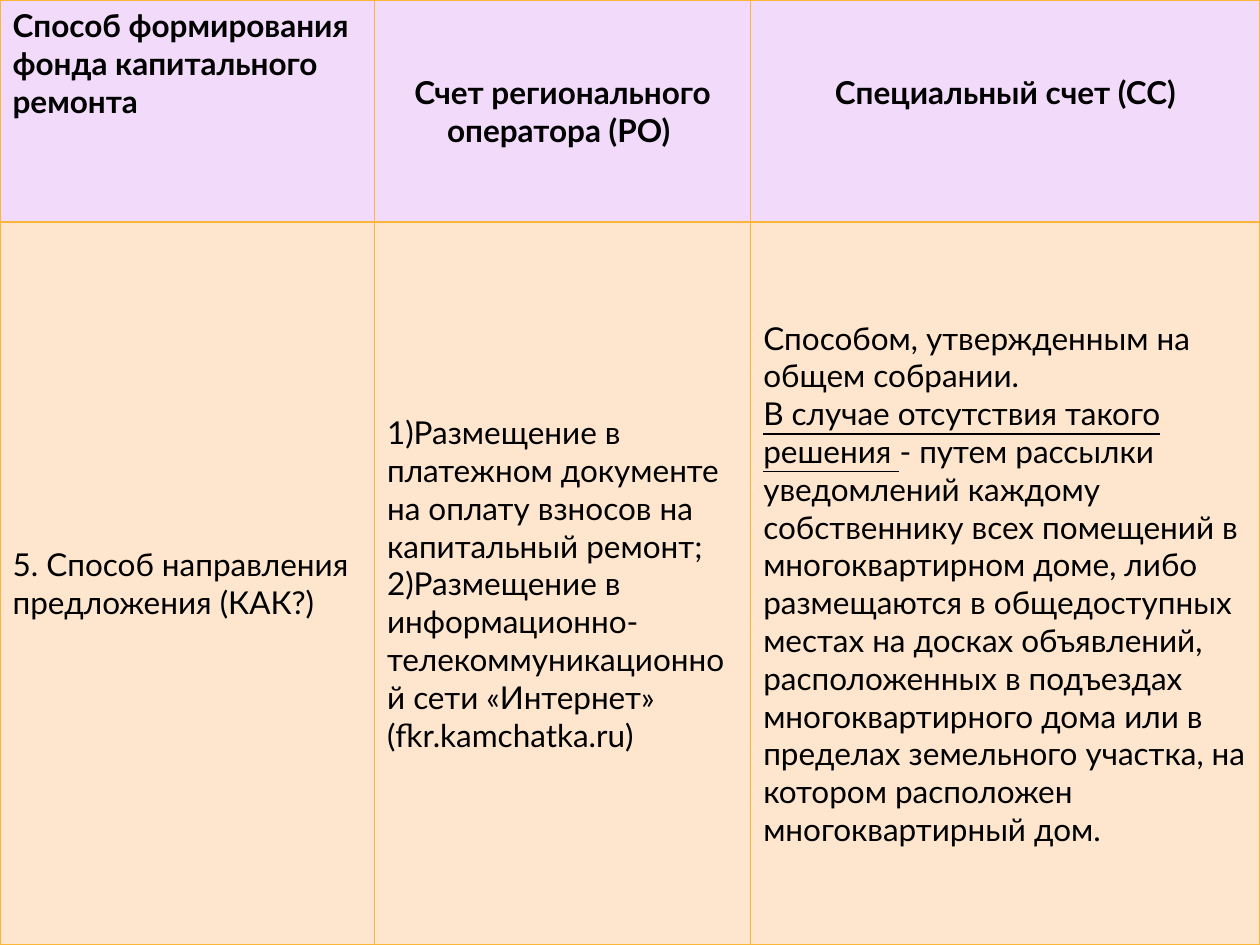
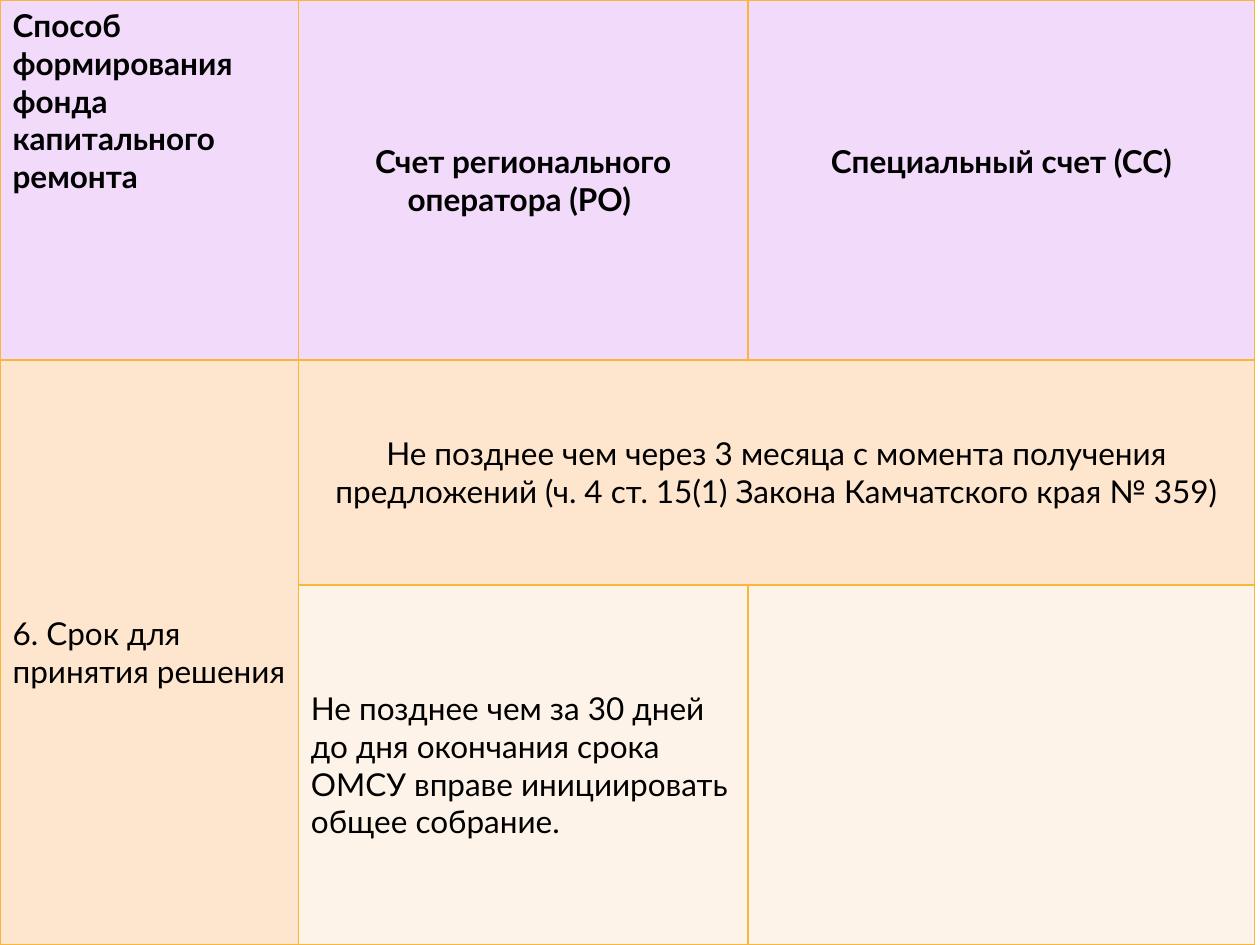
from lxml import etree
from pptx import Presentation
from pptx import util as u
from pptx.dml.color import RGBColor
from pptx.enum import text
from pptx.oxml import ns

Pt = u.Pt
HEADER, ROW, ROW_LIGHT = "F1DAFA", "FDE5CE", "FEF3E8"
LEFT, CENTER = text.PP_ALIGN.LEFT, text.PP_ALIGN.CENTER
TOP, MIDDLE = text.MSO_ANCHOR.TOP, text.MSO_ANCHOR.MIDDLE


def color(hex_string):
    return RGBColor.from_string(hex_string)


class Deck:
    font, size, ink, border = "Lato", 18, "000000", "F9B639"
    line_height = 21.6

    def __init__(self):
        self.prs = Presentation()
        self.prs.slide_width, self.prs.slide_height = Pt(720), Pt(540)

    def new_slide(self):
        self.slide = self.prs.slides.add_slide(self.prs.slide_layouts[6])

    def table(self, widths, heights):
        """Plain grid in the top left corner, every cell bordered."""
        grid = self.slide.shapes.add_table(
            len(heights), len(widths), 0, 0, Pt(sum(widths)), Pt(sum(heights))).table
        grid.first_row = grid.horz_banding = False
        for column, width in zip(grid.columns, widths):
            column.width = Pt(width)
        for row, height in zip(grid.rows, heights):
            row.height = Pt(height)
        for cell in grid.iter_cells():
            self.borders(cell)
        return grid

    def borders(self, cell):
        props = cell._tc.get_or_add_tcPr()
        for side in ("a:lnL", "a:lnR", "a:lnT", "a:lnB"):
            line = etree.SubElement(props, ns.qn(side), w=str(Pt(1)))
            fill = etree.SubElement(line, ns.qn("a:solidFill"))
            etree.SubElement(fill, ns.qn("a:srgbClr"), val=self.border)

    def cell(self, cell, fill, *paragraphs, align=LEFT, anchor=MIDDLE, bold=False):
        """Each paragraph is a list of (wording, underlined) runs."""
        cell.fill.solid()
        cell.fill.fore_color.rgb = color(fill)
        cell.vertical_anchor = anchor
        for number, runs in enumerate(paragraphs):
            frame = cell.text_frame
            paragraph = frame.add_paragraph() if number else frame.paragraphs[0]
            paragraph.alignment = align
            for wording, underlined in runs:
                run = paragraph.add_run()
                run.text = wording
                font = run.font
                font.name, font.size = self.font, Pt(self.size)
                font.bold, font.underline = bold, underlined
                font.color.rgb = color(self.ink)

    def header(self, grid):
        """Heading row shared by the slides."""
        method, regional, special = (grid.cell(0, column) for column in range(3))
        self.cell(method, HEADER, plain("Способ формирования фонда капитального ремонта"),
                  anchor=TOP, bold=True)
        self.cell(regional, HEADER, plain("Счет регионального оператора (РО) "),
                  align=CENTER, bold=True)
        self.cell(special, HEADER, plain("Специальный счет (СС)"), align=CENTER, bold=True)
        # Keeps the single line level with the first line of its neighbour
        special.margin_bottom = Pt(3.6 + self.line_height)


def plain(wording):
    return [(wording, False)]


def delivery_slide(deck):
    deck.new_slide()
    grid = deck.table((214, 215, 291), (127, 413))
    deck.header(grid)
    deck.cell(grid.cell(1, 0), ROW, plain("5. Способ направления предложения (КАК?)"))
    deck.cell(
        grid.cell(1, 1), ROW,
        plain("1)Размещение в платежном документе на оплату взносов на капитальный ремонт;"),
        plain("2)Размещение в информационно-телекоммуникационной сети «Интернет» "
              "(fkr.kamchatka.ru)"))
    deck.cell(
        grid.cell(1, 2), ROW,
        plain("Способом, утвержденным на общем собрании."),
        [("В случае отсутствия такого решения ", True),
         ("- путем рассылки уведомлений каждому собственнику всех помещений в "
          "многоквартирном доме, либо размещаются в общедоступных местах на досках "
          "объявлений, расположенных в подъездах многоквартирного дома или в пределах "
          "земельного участка, на котором расположен многоквартирный дом.", False)])


def deadline_slide(deck):
    deck.new_slide()
    grid = deck.table((170.5, 257, 289.5), (205.75, 128.5, 205.75))
    deck.header(grid)
    # Merged cells: the term on the left, the shared deadline on the right
    grid.cell(1, 0).merge(grid.cell(2, 0))
    grid.cell(1, 1).merge(grid.cell(1, 2))
    deck.cell(grid.cell(1, 0), ROW, plain("6. Срок для принятия решения"))
    deck.cell(grid.cell(1, 1), ROW,
              plain("Не позднее чем через 3 месяца с момента получения предложений "
                    "(ч. 4 ст. 15(1) Закона Камчатского края № 359)"), align=CENTER)
    deck.cell(grid.cell(2, 1), ROW_LIGHT,
              plain("Не позднее чем за 30 дней до дня окончания срока ОМСУ вправе "
                    "инициировать общее собрание."))
    deck.cell(grid.cell(2, 2), ROW_LIGHT)


def main():
    deck = Deck()
    delivery_slide(deck)
    deadline_slide(deck)
    deck.prs.save("out.pptx")


if __name__ == "__main__":
    main()
